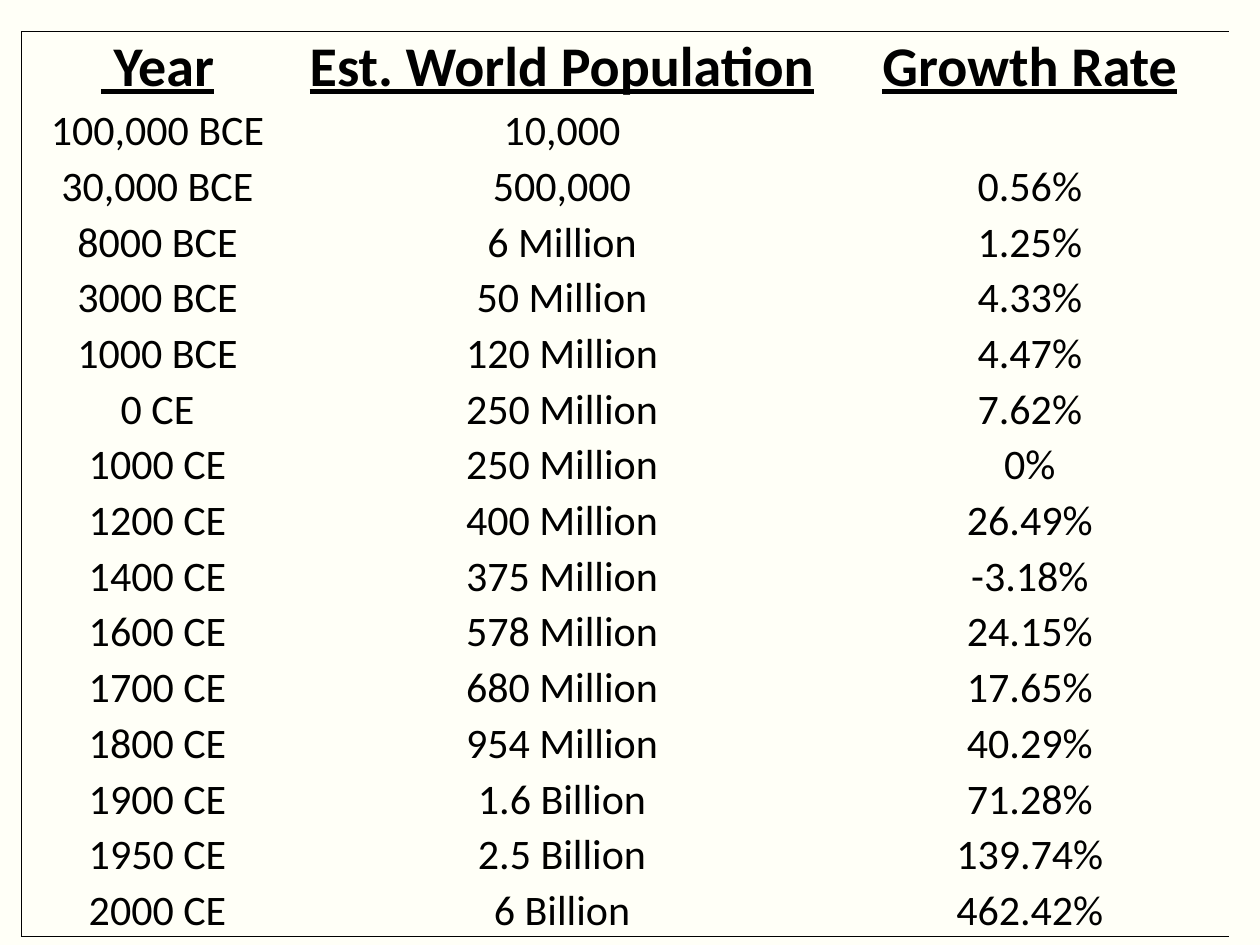
from lxml import etree
from pptx import Presentation
from pptx import util as u
from pptx.dml.color import RGBColor
from pptx.enum import text
from pptx.oxml import ns

HEADINGS = (" Year", "Est. World Population", "Growth Rate")
ESTIMATES = [
    ("100,000 BCE", "10,000", ""),
    ("30,000 BCE", "500,000", "0.56%"),
    ("8000 BCE", "6 Million", "1.25%"),
    ("3000 BCE", "50 Million", "4.33%"),
    ("1000 BCE", "120 Million", "4.47%"),
    ("0 CE", "250 Million", "7.62%"),
    ("1000 CE", "250 Million", "0%"),
    ("1200 CE", "400 Million", "26.49%"),
    ("1400 CE", "375 Million", "-3.18%"),
    ("1600 CE", "578 Million", "24.15%"),
    ("1700 CE", "680 Million", "17.65%"),
    ("1800 CE", "954 Million", "40.29%"),
    ("1900 CE", "1.6 Billion", "71.28%"),
    ("1950 CE", "2.5 Billion", "139.74%"),
    ("2000 CE", "6 Billion", "462.42%"),
]
COLUMN_WIDTHS = (5.49, 10.82, 8.04)
LEFT, TOP, HEIGHT, HEADING_HEIGHT = 0.43, 0.64, 18.24, 1.38
NO_STYLE = "{2D5ABB26-0587-4C30-8999-92F81FD0307C}"
BLACK, IVORY = "000000", "FFFFF7"


def color(value):
    return RGBColor.from_string(value)


def write(cell, words, size=24, bold=False, underline=False):
    cell.vertical_anchor = text.MSO_ANCHOR.BOTTOM
    cell.margin_left = cell.margin_right = cell.margin_top = u.Cm(0.02)
    cell.margin_bottom = 0
    paragraph = cell.text_frame.paragraphs[0]
    paragraph.alignment = text.PP_ALIGN.CENTER
    if not words:
        return
    run = paragraph.add_run()
    run.text = words
    run.font.name = "Calibri"
    run.font.size = u.Pt(size)
    run.font.bold = bold
    run.font.underline = underline
    run.font.color.rgb = color(BLACK)


def add_borders(cell, sides):
    properties = cell._tc.get_or_add_tcPr()
    for position, side in enumerate(sides):
        line = etree.Element(ns.qn(f"a:ln{side}"), w=str(u.Pt(0.5)))
        fill = etree.SubElement(line, ns.qn("a:solidFill"))
        etree.SubElement(fill, ns.qn("a:srgbClr"), val=BLACK)
        properties.insert(position, line)


def main():
    deck = Presentation()
    deck.slide_width, deck.slide_height = u.Cm(25.4), u.Cm(19.05)
    slide = deck.slides.add_slide(deck.slide_layouts[6])
    slide.background.fill.solid()
    slide.background.fill.fore_color.rgb = color(IVORY)

    rows = [HEADINGS] + ESTIMATES
    last = len(rows) - 1
    population = slide.shapes.add_table(
        len(rows), len(HEADINGS), u.Cm(LEFT), u.Cm(TOP),
        u.Cm(sum(COLUMN_WIDTHS)), u.Cm(HEIGHT)).table
    population.first_row = population.horz_banding = False
    population._tbl.tblPr.find(ns.qn("a:tableStyleId")).text = NO_STYLE

    for column, width in zip(population.columns, COLUMN_WIDTHS):
        column.width = u.Cm(width)
    row_height = (HEIGHT - HEADING_HEIGHT) / len(ESTIMATES)
    for r, entries in enumerate(rows):
        population.rows[r].height = u.Cm(row_height if r else HEADING_HEIGHT)
        look = {} if r else {"size": 32, "bold": True, "underline": True}
        for c, words in enumerate(entries):
            cell = population.cell(r, c)
            write(cell, words, **look)
            cell.fill.background()
            edges = (("L", c == 0), ("T", r == 0), ("B", r == last))
            add_borders(cell, [side for side, outer in edges if outer])

    deck.save("out.pptx")


if __name__ == "__main__":
    main()
